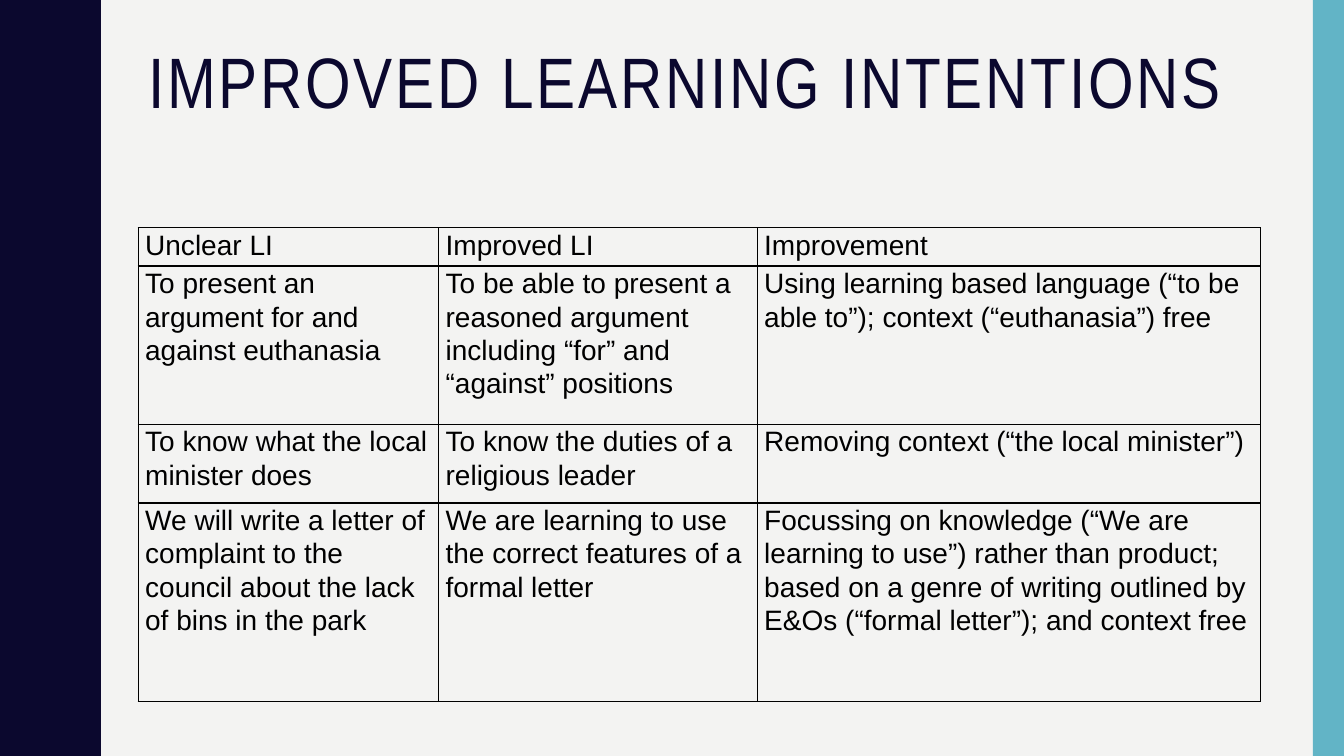
from lxml import etree
from pptx import Presentation
from pptx.dml.color import RGBColor
from pptx.enum.shapes import MSO_SHAPE
from pptx.enum.text import MSO_ANCHOR
from pptx.oxml.ns import qn
from pptx.util import Inches, Pt

RECTANGLE = MSO_SHAPE.RECTANGLE
TOP = MSO_ANCHOR.TOP

NAVY = "0B082E"
TEAL = "62B4C6"
PAPER = "F3F3F2"
BLACK = "000000"

WAVE_PERIOD = 1.5
WAVE_COUNT = 5
RISING_WAVE = [
    (0.78, 0), (0.78, 0.07), (0.79, 0.14), (0.8, 0.2), (0.81, 0.25),
    (0.83, 0.29), (0.85, 0.33), (0.87, 0.38), (0.89, 0.42), (0.91, 0.46),
    (0.93, 0.5), (0.95, 0.55), (0.96, 0.61), (0.97, 0.68),
]

COLUMN_WIDTHS = [2.98, 3.16, 4.99]
ROW_HEIGHTS = [0.38, 1.57, 0.78, 1.97]
INTENTIONS = [
    ["Unclear LI", "Improved LI", "Improvement"],
    ["To present an argument for and against euthanasia",
     "To be able to present a reasoned argument including “for” and “against” positions",
     "Using learning based language (“to be able to”); context (“euthanasia”) free"],
    ["To know what the local minister does",
     "To know the duties of a religious leader",
     "Removing context (“the local minister”)"],
    ["We will write a letter of complaint to the council about the lack of bins in the park",
     "We are learning to use the correct features of a formal letter",
     "Focussing on knowledge (“We are learning to use”) rather than product; "
     "based on a genre of writing outlined by E&Os (“formal letter”); and context free"],
]


def color(value):
    return RGBColor.from_string(value)


class SlideBuilder:
    title_font = "Arial Narrow"
    body_font = "Arial"

    def __init__(self, slide):
        self.slide = slide
        slide.background.fill.solid()
        slide.background.fill.fore_color.rgb = color(PAPER)

    def paint(self, shape, fill):
        shape.shadow.inherit = False
        shape.fill.solid()
        shape.fill.fore_color.rgb = color(fill)
        shape.line.fill.background()

    def style(self, paragraph, font, size, ink, spacing):
        paragraph.line_spacing = spacing
        paragraph.font.name = font
        paragraph.font.size = Pt(size)
        paragraph.font.color.rgb = color(ink)

    def bar(self, left, top, width, height, fill):
        bar = self.slide.shapes.add_shape(
            RECTANGLE, Inches(left), Inches(top), Inches(width), Inches(height))
        self.paint(bar, fill)

    def outline(self, points, fill):
        start, *rest = points
        builder = self.slide.shapes.build_freeform(*start, scale=Inches(1))
        builder.add_line_segments(rest, close=True)
        self.paint(builder.convert_to_shape(), fill)

    def title(self, text, left, top, width, height):
        box = self.slide.shapes.add_textbox(
            Inches(left), Inches(top), Inches(width), Inches(height))
        frame = box.text_frame
        frame.word_wrap = True
        frame.vertical_anchor = TOP
        paragraph = frame.paragraphs[0]
        run = paragraph.add_run()
        run.text = text
        self.style(paragraph, self.title_font, 51, NAVY, 0.9)
        run.font._element.set("spc", "200")

    def border(self, cell):
        properties = cell._tc.get_or_add_tcPr()
        for position, side in enumerate(("a:lnL", "a:lnR", "a:lnT", "a:lnB")):
            line = etree.Element(qn(side), w=str(Pt(1)))
            fill = etree.SubElement(line, qn("a:solidFill"))
            etree.SubElement(fill, qn("a:srgbClr"), val=BLACK)
            properties.insert(position, line)

    def table(self, rows, left, top, widths, heights):
        table = self.slide.shapes.add_table(
            len(rows), len(widths), Inches(left), Inches(top),
            Inches(sum(widths)), Inches(sum(heights))).table
        table.first_row = False
        table.horz_banding = False
        for column, width in zip(table.columns, widths):
            column.width = Inches(width)
        for row, height, texts in zip(table.rows, heights, rows):
            row.height = Inches(height)
            for cell, text in zip(row.cells, texts):
                cell.text = text
                cell.margin_left = cell.margin_right = Inches(0.07)
                cell.margin_top = cell.margin_bottom = 0
                cell.vertical_anchor = TOP
                cell.fill.background()
                self.border(cell)
                self.style(cell.text_frame.paragraphs[0], self.body_font, 20, BLACK, 1.07)


def wavy_edge():
    falling = [(x, WAVE_PERIOD - y) for x, y in reversed(RISING_WAVE[1:])]
    wave = RISING_WAVE + [(0.97, WAVE_PERIOD / 2)] + falling
    edge = [(x, y + WAVE_PERIOD * i) for i in range(WAVE_COUNT) for x, y in wave]
    return [(0, 0), *edge, (0.78, 7.5), (0, 7.5)]


def main():
    presentation = Presentation()
    presentation.slide_width = Inches(13.33)
    presentation.slide_height = Inches(7.5)
    builder = SlideBuilder(presentation.slides.add_slide(presentation.slide_layouts[6]))
    builder.outline(wavy_edge(), NAVY)
    builder.bar(13.02, 0, 0.31, 7.5, TEAL)
    builder.title("IMPROVED LEARNING INTENTIONS", 1.37, 0.42, 11.13, 1.63)
    builder.table(INTENTIONS, 1.37, 2.26, COLUMN_WIDTHS, ROW_HEIGHTS)
    presentation.save("out.pptx")


if __name__ == "__main__":
    main()
